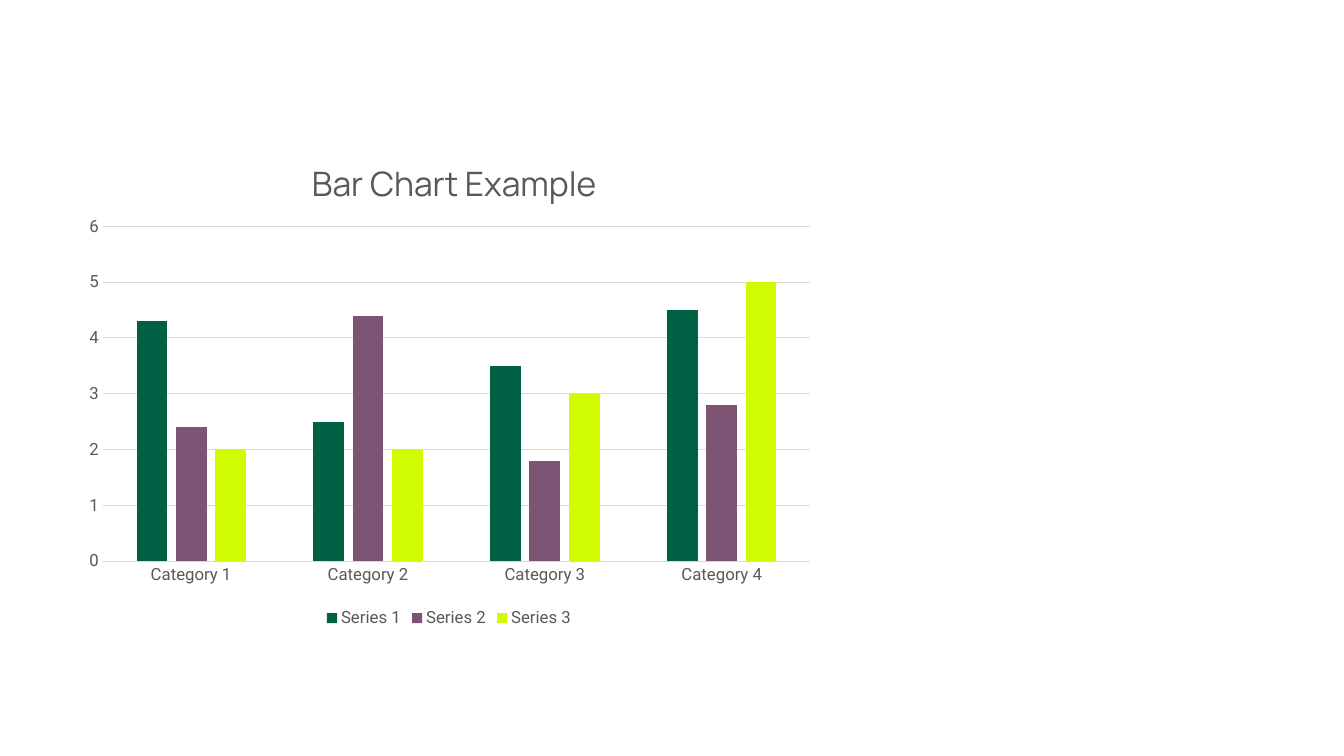
import pptx
import pptx.chart.data
import pptx.dml.color
import pptx.enum.chart
import pptx.oxml
import pptx.oxml.ns
import pptx.util

Cm = pptx.util.Cm
Pt = pptx.util.Pt

COLORS = {"title": "59595B", "label": "595959", "grid": "D9D9D9", "background": "FFFFFF"}
CATEGORIES = ["Category 1", "Category 2", "Category 3", "Category 4"]
SERIES = {
    "Series 1": ("006144", (4.3, 2.5, 3.5, 4.5)),
    "Series 2": ("7E5475", (2.4, 4.4, 1.8, 2.8)),
    "Series 3": ("CFFC00", (2, 2, 3, 5)),
}


def rgb(value):
    """Turn a hex string into a colour."""
    return pptx.dml.color.RGBColor.from_string(value)


def style_font(font, name, size, color):
    """Apply a typeface, a size and a colour to a font."""
    font.name = name
    font.size = Pt(size)
    font.bold = False
    font.color.rgb = rgb(color)


def style_line(line, color):
    """Give a line the thin chart rule."""
    line.color.rgb = rgb(color)
    line.width = Pt(0.75)


def set_layout(element, **fractions):
    """Place a chart part by fractions of the chart area."""
    for old in element.findall(pptx.oxml.ns.qn("c:layout")):
        element.remove(old)
    target = '<c:layoutTarget val="inner"/>' if "w" in fractions else ""
    modes = "".join(f'<c:{key}Mode val="edge"/>' for key in ("x", "y"))
    values = "".join(f'<c:{key} val="{value}"/>' for key, value in fractions.items())
    layout = pptx.oxml.parse_xml(
        f'<c:layout {pptx.oxml.ns.nsdecls("c")}>'
        f"<c:manualLayout>{target}{modes}{values}</c:manualLayout></c:layout>"
    )
    text = element.find(pptx.oxml.ns.qn("c:tx"))
    if text is None:
        element.insert(0, layout)
    else:
        text.addnext(layout)


def style_axis(axis):
    """Set the labels of an axis and hide its ticks."""
    axis.major_tick_mark = pptx.enum.chart.XL_TICK_MARK.NONE
    axis.minor_tick_mark = pptx.enum.chart.XL_TICK_MARK.NONE
    style_font(axis.tick_labels.font, "Roboto", 12, COLORS["label"])


def add_bar_chart(slide, left, top, width, height):
    """Draw the titled column chart in the given box."""
    data = pptx.chart.data.CategoryChartData()
    data.categories = CATEGORIES
    for name, (color, values) in SERIES.items():
        data.add_series(name, values)
    kind = pptx.enum.chart.XL_CHART_TYPE.COLUMN_CLUSTERED
    chart = slide.shapes.add_chart(kind, left, top, width, height, data).chart
    chart.font.name = "Roboto"
    chart.font.size = Pt(10)

    title = chart.chart_title
    title.text_frame.text = "Bar Chart Example"
    style_font(title.text_frame.paragraphs[0].runs[0].font, "Manrope", 24, COLORS["title"])
    title.include_in_layout = False
    set_layout(title._element, x=0.31, y=0.05)
    set_layout(chart._chartSpace.chart.plotArea, x=0.04, y=0.2, w=0.94, h=0.66)

    plot = chart.plots[0]
    plot.gap_width = 219
    plot.overlap = -27
    plot.vary_by_categories = False
    for series in plot.series:
        series.format.fill.solid()
        series.format.fill.fore_color.rgb = rgb(SERIES[series.name][0])
        series.invert_if_negative = False

    style_axis(chart.category_axis)
    style_line(chart.category_axis.format.line, COLORS["grid"])
    value_axis = chart.value_axis
    style_axis(value_axis)
    value_axis.minimum_scale, value_axis.maximum_scale, value_axis.major_unit = 0, 6, 1
    value_axis.format.line.fill.background()
    value_axis.has_major_gridlines = True
    style_line(value_axis.major_gridlines.format.line, COLORS["grid"])

    chart.has_legend = True
    chart.legend.position = pptx.enum.chart.XL_LEGEND_POSITION.BOTTOM
    chart.legend.include_in_layout = False
    style_font(chart.legend.font, "Roboto", 12, COLORS["label"])


def main():
    """Build and save the slide."""
    presentation = pptx.Presentation()
    presentation.slide_width = Cm(33.87)
    presentation.slide_height = Cm(19.05)
    slide = presentation.slides.add_slide(presentation.slide_layouts[6])
    slide.background.fill.solid()
    slide.background.fill.fore_color.rgb = rgb(COLORS["background"])
    add_bar_chart(slide, Cm(1.83), Cm(3.15), Cm(18.97), Cm(12.78))
    presentation.save("out.pptx")


if __name__ == "__main__":
    main()
